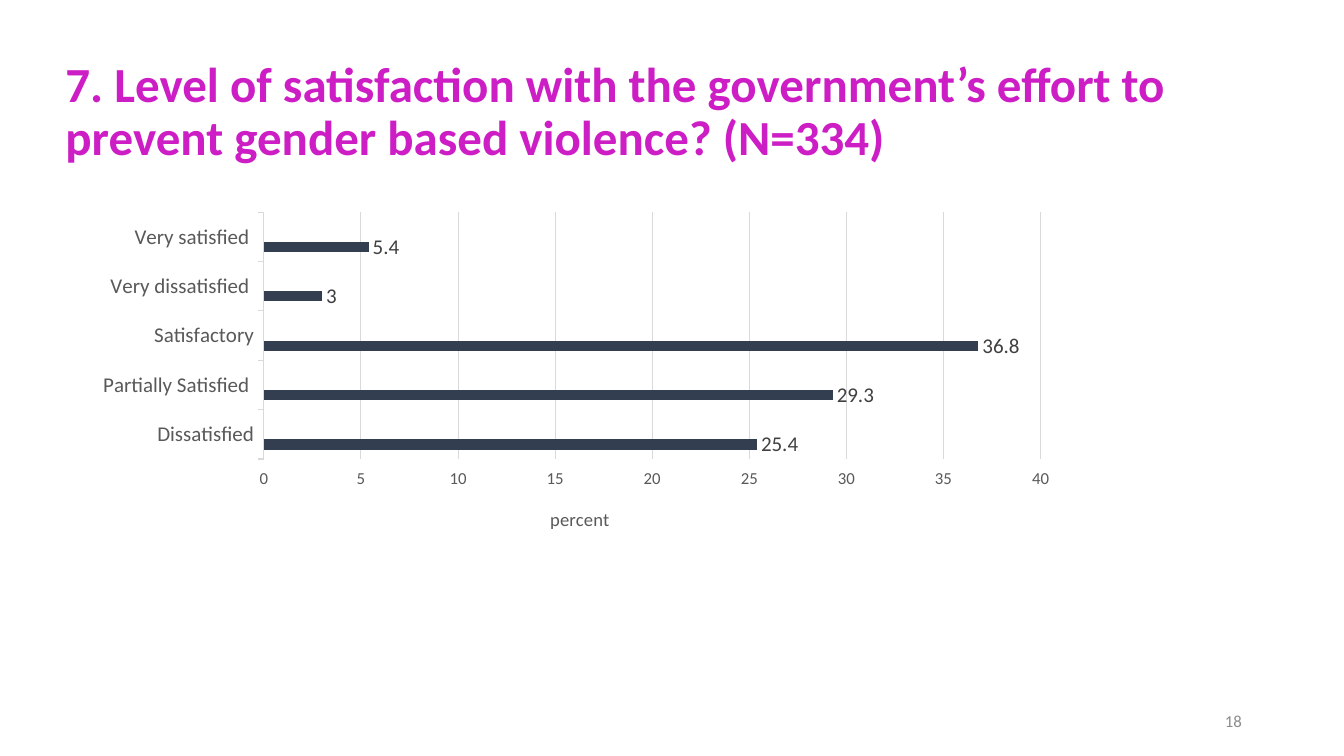
from lxml import etree
from pptx import Presentation
from pptx.chart.data import CategoryChartData
from pptx.dml.color import RGBColor
from pptx.enum.chart import XL_CHART_TYPE, XL_LABEL_POSITION, XL_TICK_MARK
from pptx.enum.text import MSO_ANCHOR, PP_ALIGN
from pptx.oxml.ns import qn
from pptx.util import Cm, Pt

BAR_CLUSTERED = XL_CHART_TYPE.BAR_CLUSTERED
OUTSIDE_END = XL_LABEL_POSITION.OUTSIDE_END
TICK_OUTSIDE = XL_TICK_MARK.OUTSIDE
TICK_NONE = XL_TICK_MARK.NONE
MIDDLE = MSO_ANCHOR.MIDDLE
LEFT, RIGHT = PP_ALIGN.LEFT, PP_ALIGN.RIGHT

TITLE = ("7. Level of satisfaction with the government’s effort to "
         "prevent gender based violence? (N=334)")
SATISFACTION = {
    "Dissatisfied": 25.4,
    "Partially Satisfied ": 29.3,
    "Satisfactory": 36.8,
    "Very dissatisfied ": 3,
    "Very satisfied ": 5.4,
}
SERIES_STYLE = [("333F50", 15), ("ED7D31", 12), ("A5A5A5", 12)]


def color(value):
    return RGBColor.from_string(value)


def apply(target, values):
    for name, value in values.items():
        setattr(target, name, value)


def place(parent, index, **fractions):
    for old in parent.findall(qn("c:layout")):
        parent.remove(old)
    layout = etree.Element(qn("c:layout"))
    manual = etree.SubElement(layout, qn("c:manualLayout"))
    for name, value in fractions.items():
        etree.SubElement(manual, qn(f"c:{name}")).set("val", str(value))
    parent.insert(index, layout)


class SlideBuilder:
    font_name = "Calibri"
    grid_color = "D9D9D9"
    axis_color = "595959"
    label_color = "404040"

    def __init__(self, page):
        self.page = page

    def style_font(self, font, size, hex_color, bold=False):
        apply(font, {"name": self.font_name, "size": Pt(size), "bold": bold})
        font.color.rgb = color(hex_color)

    def style_line(self, line):
        line.color.rgb = color(self.grid_color)
        line.width = Pt(0.75)

    def text(self, area, wording, size, hex_color, bold=False, align=LEFT, spacing=1.0):
        box = self.page.shapes.add_textbox(*map(Cm, area))
        apply(box.text_frame, {"word_wrap": True, "vertical_anchor": MIDDLE})
        para = box.text_frame.paragraphs[0]
        apply(para, {"alignment": align, "line_spacing": spacing})
        span = para.add_run()
        span.text = wording
        self.style_font(span.font, size, hex_color, bold)

    def bar_chart(self, area, values, series_style, axis_title):
        data = CategoryChartData()
        data.categories = list(values)
        empty = [None] * len(values)
        for number in range(1, len(series_style) + 1):
            data.add_series(f"Series {number}", values.values() if number == 1 else empty)
        frame = self.page.shapes.add_chart(BAR_CLUSTERED, *map(Cm, area), data)
        chart = frame.chart
        apply(chart, {"has_legend": False, "has_title": False})
        self.style_font(chart.font, 10, "000000")
        plot = chart.plots[0]
        apply(plot, {"gap_width": 182, "vary_by_categories": False})
        for series, (fill, size) in zip(plot.series, series_style):
            series.format.fill.solid()
            series.format.fill.fore_color.rgb = color(fill)
            labels = series.data_labels
            apply(labels, {"show_value": True, "position": OUTSIDE_END})
            self.style_font(labels.font, size, self.label_color)
        self.axes(chart, axis_title)
        place(chart._chartSpace.find(".//" + qn("c:plotArea")), 0,
              layoutTarget="inner", xMode="edge", yMode="edge",
              x=0.182, y=0.019, w=0.788, h=0.723)

    def axes(self, chart, axis_title):
        category, value = chart.category_axis, chart.value_axis
        apply(category, {"major_tick_mark": TICK_OUTSIDE, "minor_tick_mark": TICK_NONE})
        self.style_font(category.tick_labels.font, 15, self.axis_color)
        self.style_line(category.format.line)
        apply(value, {"minimum_scale": 0, "maximum_scale": 40, "major_unit": 5,
                      "major_tick_mark": TICK_OUTSIDE, "minor_tick_mark": TICK_NONE,
                      "has_major_gridlines": True})
        self.style_font(value.tick_labels.font, 12, self.axis_color)
        value.format.line.fill.background()
        self.style_line(value.major_gridlines.format.line)
        span = value.axis_title.text_frame.paragraphs[0].add_run()
        span.text = axis_title
        self.style_font(span.font, 13.3, self.axis_color)
        place(value.axis_title._element, 1, xMode="edge", yMode="edge", x=0.469, y=0.87)


def main():
    deck = Presentation()
    apply(deck, {"slide_width": Cm(33.87), "slide_height": Cm(19.05)})
    builder = SlideBuilder(deck.slides.add_slide(deck.slide_layouts[6]))
    builder.text((1.4, 1.02, 30.12, 3.68), TITLE, 35, "CD1DC5", bold=True, spacing=0.9)
    builder.bar_chart((2.13, 5.18, 24.84, 8.61), SATISFACTION, SERIES_STYLE, "percent")
    builder.text((23.93, 17.65, 7.62, 1.02), "18", 12, "8C8C8C", align=RIGHT)
    deck.save("out.pptx")


if __name__ == "__main__":
    main()
